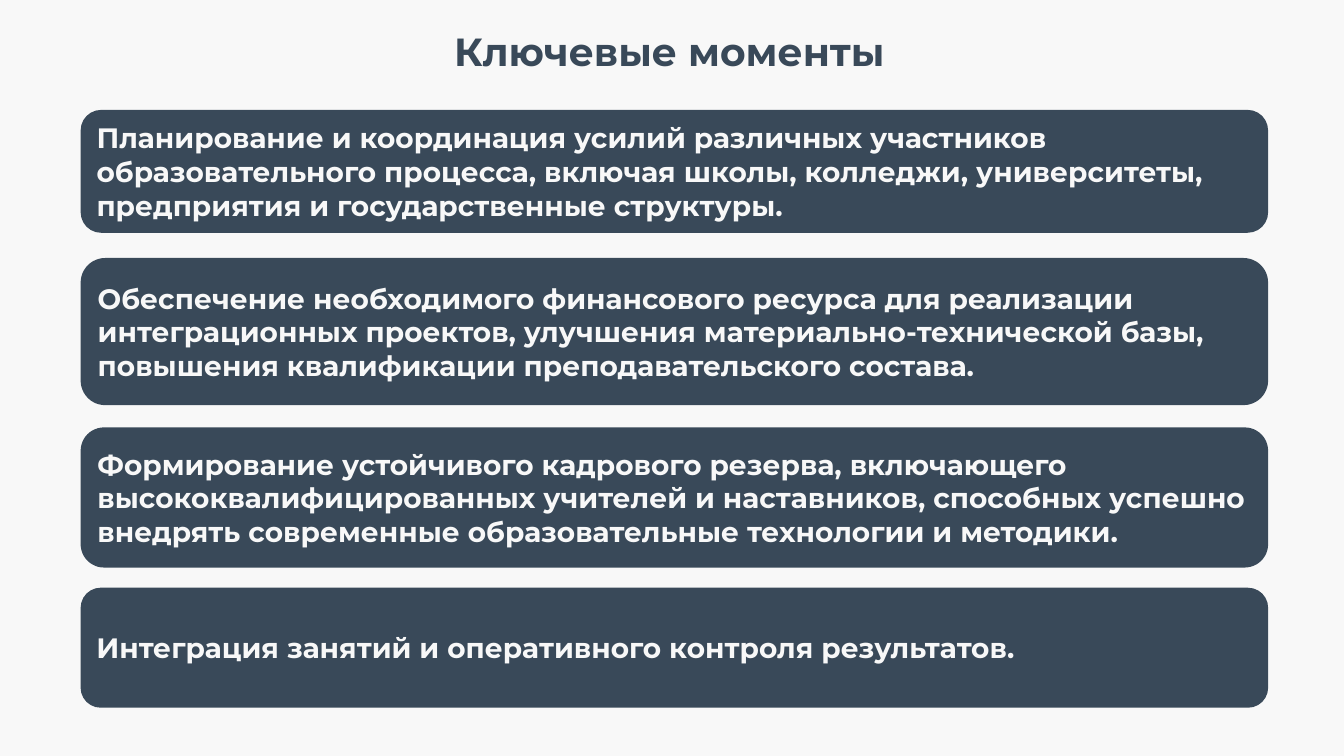
import pptx
import pptx.dml.color
import pptx.enum.shapes
import pptx.enum.text
import pptx.util

Pt = pptx.util.Pt
RGBColor = pptx.dml.color.RGBColor
ALIGN = pptx.enum.text.PP_ALIGN
ANCHOR = pptx.enum.text.MSO_ANCHOR

SLATE = RGBColor(0x39, 0x49, 0x59)
PAPER = RGBColor(0xF8, 0xF8, 0xF8)
FONT = "Montserrat"

TITLE_BOX = (137.5, 15.8, 689, 41)
CARDS_LEFT, CARDS_WIDTH = 57.6, 848.2

# Top, height and wording of each card
CARDS = [
    (78.5, 87.8, "Планирование и координация усилий различных участников "
     "образовательного процесса, включая школы, колледжи, университеты, "
     "предприятия и государственные структуры."),
    (184.3, 105.1, "Обеспечение необходимого финансового ресурса для реализации "
     "интеграционных проектов, улучшения материально-технической базы, "
     "повышения квалификации преподавательского состава."),
    (305.3, 100.1, "Формирование устойчивого кадрового резерва, включающего "
     "высококвалифицированных учителей и наставников, способных успешно "
     "внедрять современные образовательные технологии и методики."),
    (419.8, 85.7, "Интеграция занятий и оперативного контроля результатов."),
]


def write_text(shape, text, size, color, align=ALIGN.LEFT, anchor=ANCHOR.MIDDLE):
    frame = shape.text_frame
    frame.word_wrap = True
    frame.auto_size = pptx.enum.text.MSO_AUTO_SIZE.NONE
    frame.vertical_anchor = anchor
    para = frame.paragraphs[0]
    para.alignment = align
    para.line_spacing = 1.0
    para.space_before = Pt(0)
    span = para.add_run()
    span.text = text
    span.font.name = FONT
    span.font.size = Pt(size)
    span.font.bold = True
    span.font.color.rgb = color


def place_title(page, box):
    title = page.shapes.title
    title.left, title.top, title.width, title.height = map(Pt, box)
    write_text(title, "Ключевые моменты ", size=28, color=SLATE,
               align=ALIGN.CENTER, anchor=ANCHOR.TOP)


def add_card(page, box, text):
    card = page.shapes.add_shape(
        pptx.enum.shapes.MSO_SHAPE.ROUNDED_RECTANGLE, *map(Pt, box))
    card.shadow.inherit = False
    card.fill.solid()
    card.fill.fore_color.rgb = SLATE
    card.line.fill.background()
    write_text(card, text, size=20, color=PAPER)


def build_key_points(deck):
    page = deck.slides.add_slide(deck.slide_layouts.get_by_name("Title Only"))
    page.background.fill.solid()
    page.background.fill.fore_color.rgb = PAPER

    # Heading
    place_title(page, TITLE_BOX)

    # Stack of cards
    for top, height, text in CARDS:
        add_card(page, (CARDS_LEFT, top, CARDS_WIDTH, height), text)


def main():
    deck = pptx.Presentation()
    deck.slide_width, deck.slide_height = Pt(960), Pt(540)
    build_key_points(deck)
    deck.save("out.pptx")


if __name__ == "__main__":
    main()
